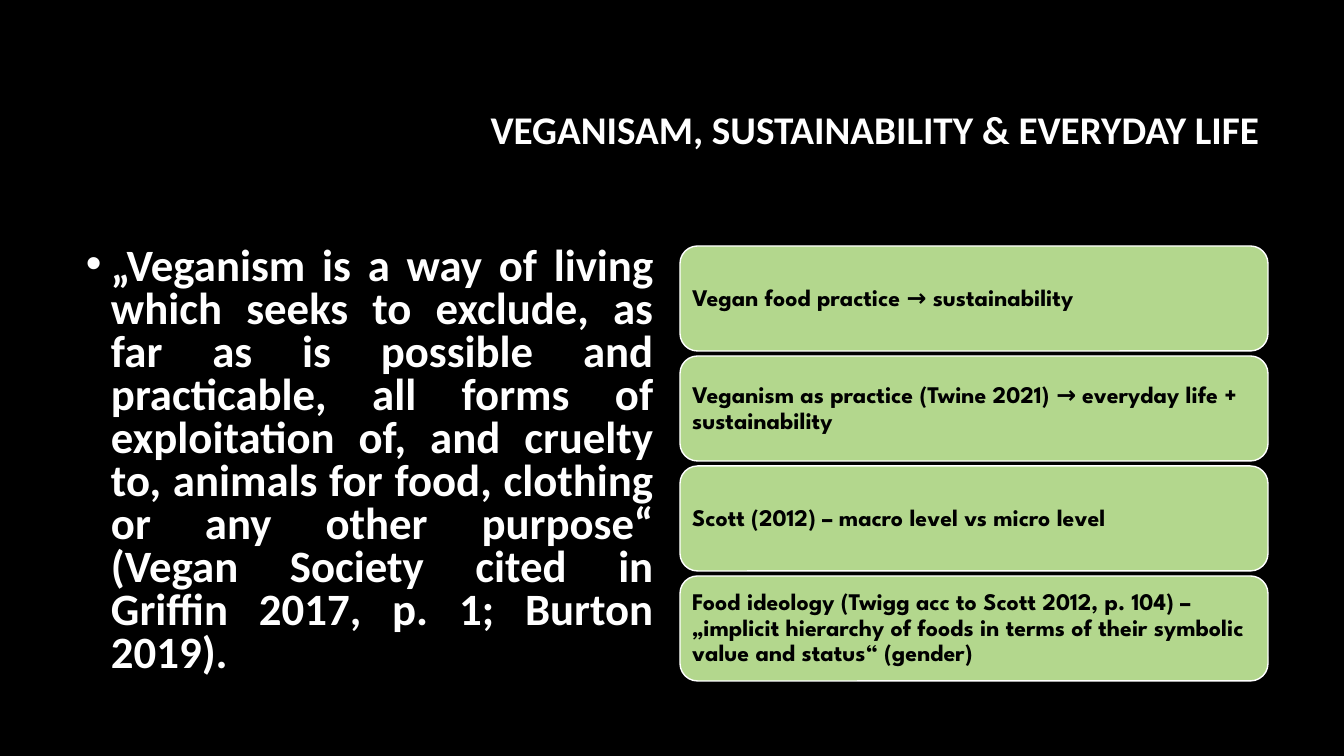
"""Build a slide on veganism, sustainability and everyday life."""
from lxml import etree
from pptx import Presentation, util as u
from pptx.dml.color import RGBColor
from pptx.enum import shapes, text

TITLE = "VEGANISAM, SUSTAINABILITY & EVERYDAY LIFE"
QUOTE = (
    "„Veganism is a way of living which seeks to exclude, as far as is possible "
    "and practicable, all forms of exploitation of, and cruelty to, animals for "
    "food, clothing or any other purpose“ (Vegan Society cited in Griffin 2017, "
    "p. 1; Burton 2019)."
)
CARDS = [
    "Vegan food practice → sustainability",
    "Veganism as practice (Twine 2021) → everyday life + sustainability",
    "Scott (2012) – macro level vs micro level",
    "Food ideology (Twigg acc to Scott 2012, p. 104) – „implicit hierarchy of "
    "foods in terms of their symbolic value and status“ (gender)",
]
COLORS = {"background": "000000", "light": "FFFFFF", "card": "B3D78D", "dark": "000000"}

TITLE_BOX = (320, 85, 949, 142)
QUOTE_BOX = (76, 242, 588, 444)
CARD_LEFT, CARD_TOP, CARD_WIDTH, CARD_HEIGHT, CARD_GAP = 680, 246, 588, 105, 5
QUOTE_INDENT = 25


def px(length):
    return u.Emu(round(length * 914400 / 100.8))


def color(name):
    return RGBColor.from_string(COLORS[name])


def write(shape, words, font, size, ink, align, spacing, anchor, insets):
    frame = shape.text_frame
    frame.text = words
    frame.word_wrap = True
    frame.vertical_anchor = anchor
    (frame.margin_left, frame.margin_top,
     frame.margin_right, frame.margin_bottom) = map(px, insets)
    paragraph = frame.paragraphs[0]
    paragraph.alignment = align
    paragraph.line_spacing = spacing
    for run in paragraph.runs:
        run.font.name = font
        run.font.size = u.Pt(size)
        run.font.bold = True
        run.font.color.rgb = color(ink)
    return paragraph


def add_bullet(paragraph, indent):
    properties = paragraph._p.get_or_add_pPr()
    properties.set("marL", str(px(indent)))
    properties.set("indent", str(-px(indent)))
    namespace = properties.nsmap["a"]
    etree.SubElement(properties, f"{{{namespace}}}buFont", typeface="Arial")
    etree.SubElement(properties, f"{{{namespace}}}buChar", char="•")


def main():
    deck = Presentation()
    deck.slide_width, deck.slide_height = px(1344), px(756)
    slide = deck.slides.add_slide(deck.slide_layouts[6])
    slide.background.fill.solid()
    slide.background.fill.fore_color.rgb = color("background")

    title = slide.shapes.add_textbox(*map(px, TITLE_BOX))
    write(title, TITLE, "Calibri", 28, "light", text.PP_ALIGN.RIGHT, 0.9,
          text.MSO_ANCHOR.MIDDLE, (10, 5, 10, 54))

    quote = slide.shapes.add_textbox(*map(px, QUOTE_BOX))
    quote_paragraph = write(quote, QUOTE, "Calibri", 32, "light",
                            text.PP_ALIGN.JUSTIFY, 0.8,
                            text.MSO_ANCHOR.TOP, (10, 5, 10, 5))
    add_bullet(quote_paragraph, QUOTE_INDENT)

    for row, statement in enumerate(CARDS):
        top = CARD_TOP + row * (CARD_HEIGHT + CARD_GAP)
        card = slide.shapes.add_shape(
            shapes.MSO_SHAPE.ROUNDED_RECTANGLE,
            *map(px, (CARD_LEFT, top, CARD_WIDTH, CARD_HEIGHT)))
        card.shadow.inherit = False
        card.fill.solid()
        card.fill.fore_color.rgb = color("card")
        card.line.color.rgb = color("light")
        card.line.width = u.Pt(1)
        write(card, statement, "League Spartan", 17, "dark", text.PP_ALIGN.LEFT,
              0.9, text.MSO_ANCHOR.MIDDLE, (7, 7, 7, 7))

    deck.save("out.pptx")


if __name__ == "__main__":
    main()
